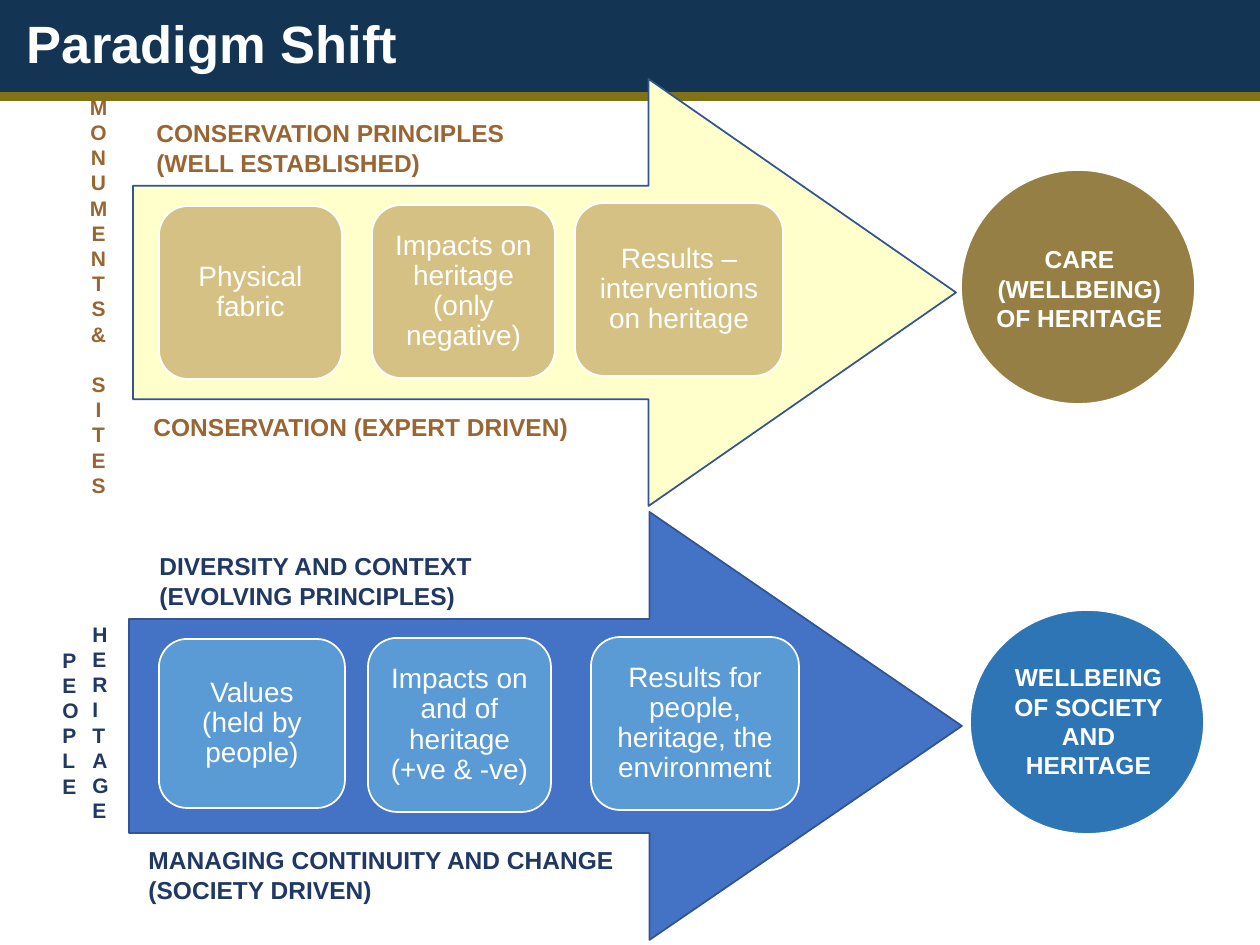
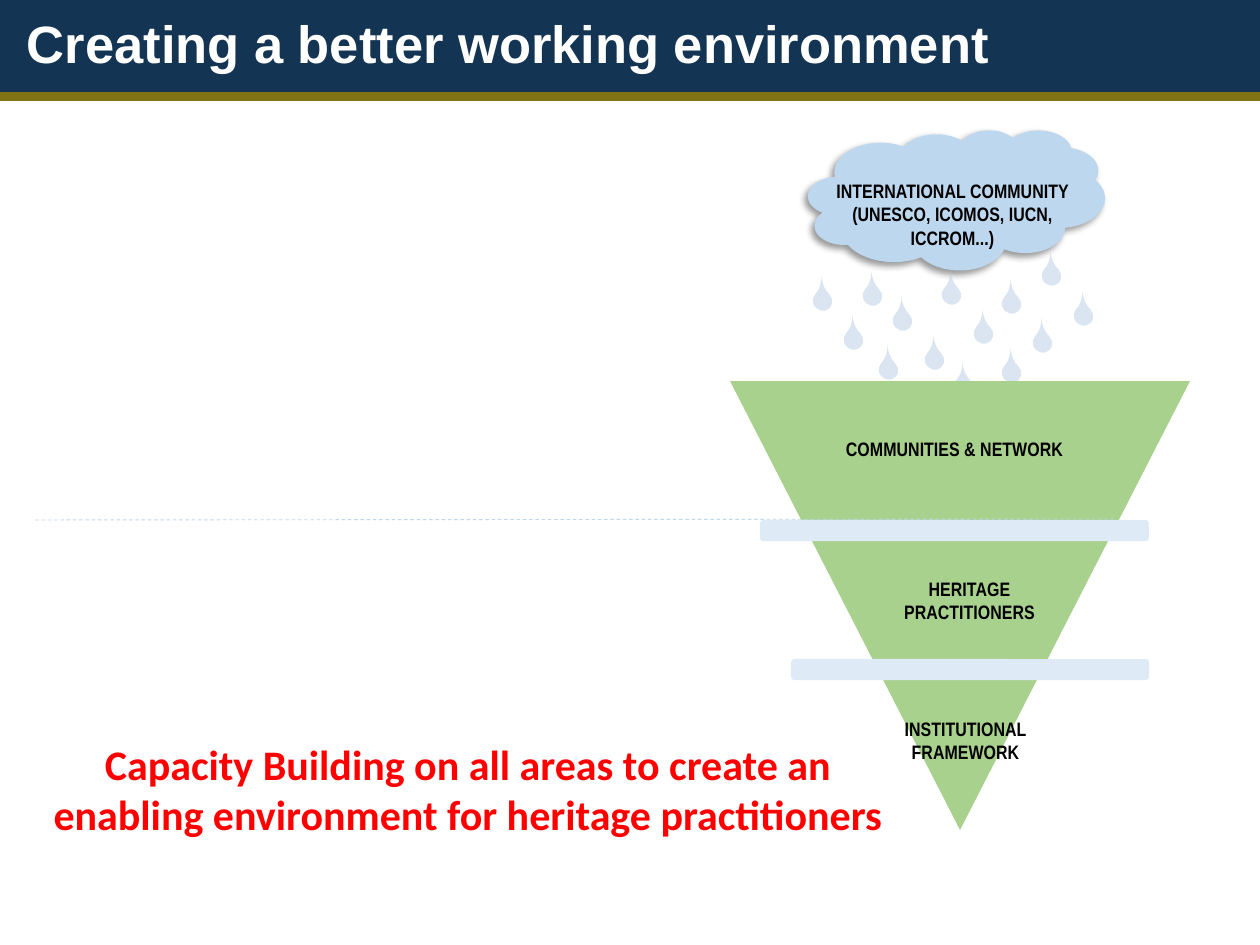
import pptx
import pptx.dml.color
import pptx.enum.dml
import pptx.enum.shapes
import pptx.enum.text
import pptx.oxml
import pptx.oxml.ns
import pptx.util

RGBColor = pptx.dml.color.RGBColor
Shape = pptx.enum.shapes.MSO_SHAPE
Align = pptx.enum.text.PP_ALIGN
Anchor = pptx.enum.text.MSO_ANCHOR
AutoSize = pptx.enum.text.MSO_AUTO_SIZE

PX_PER_INCH = 126
SLIDE_WIDTH, SLIDE_HEIGHT = 1260, 945
HEADER_HEIGHT, BAND_HEIGHT = 92, 9

WHITE = RGBColor(0xFF, 0xFF, 0xFF)
BLACK = RGBColor(0x00, 0x00, 0x00)
RED = RGBColor(0xFF, 0x00, 0x00)
NAVY = RGBColor(0x13, 0x34, 0x53)
OLIVE = RGBColor(0x80, 0x72, 0x15)
ARROW_EDGE = RGBColor(0x32, 0x54, 0x91)
CREAM = RGBColor(0xFF, 0xFF, 0xCC)
SAND = RGBColor(0xD6, 0xC1, 0x84)
BRONZE = RGBColor(0x96, 0x7F, 0x44)
BROWN = RGBColor(0x99, 0x66, 0x33)
ROYAL_BLUE = RGBColor(0x44, 0x72, 0xC4)
SKY_BLUE = RGBColor(0x5B, 0x9B, 0xD5)
OCEAN_BLUE = RGBColor(0x2E, 0x75, 0xB6)
DARK_BLUE = RGBColor(0x20, 0x38, 0x64)
CLOUD_BLUE = RGBColor(0xBD, 0xD7, 0xEE)
RAIN_BLUE = RGBColor(0xB9, 0xCD, 0xE5)
BAR_BLUE = RGBColor(0xDE, 0xEB, 0xF7)
GREEN = RGBColor(0xA9, 0xD1, 0x8E)

DROP_SIZE = (19, 20)
DROPS = [(813, 291), (844, 330), (893, 311), (925, 350), (942, 285),
         (974, 324), (1002, 294), (1033, 333), (1042, 266), (1074, 306),
         (863, 286), (1002, 363), (954, 377), (879, 360)]


def px(length):
    return pptx.util.Emu(round(length * 914400 / PX_PER_INCH))


def place(shape, box):
    shape.left, shape.top, shape.width, shape.height = map(px, box)


def format_text(shape, text, size, color, bold=True, font="Arial",
                align=Align.LEFT, spacing=None):
    frame = shape.text_frame
    frame.text = text
    for paragraph in frame.paragraphs:
        paragraph.alignment = align
        if spacing:
            paragraph.line_spacing = spacing
        for run in paragraph.runs:
            run.font.size = pptx.util.Pt(size)
            run.font.name = font
            run.font.bold = bold
            run.font.color.rgb = color


def add_filled(slide, kind, box, fill, line=None):
    shape = slide.shapes.add_shape(kind, *map(px, box))
    shape.shadow.inherit = False
    shape.fill.solid()
    shape.fill.fore_color.rgb = fill
    if line is None:
        shape.line.fill.background()
    else:
        shape.line.color.rgb = line
        shape.line.width = pptx.util.Pt(1)
    return shape


def add_label(slide, box, text, size, color, **style):
    label = slide.shapes.add_textbox(*map(px, box))
    label.text_frame.word_wrap = True
    format_text(label, text, size, color, **style)
    return label


def add_stacked_label(slide, box, text, color, align=Align.LEFT, wrap=True):
    """Letters stand upright, one below the other."""
    label = add_label(slide, box, text, 12, color, align=align)
    frame = label.text_frame
    frame.word_wrap = wrap
    frame.auto_size = AutoSize.SHAPE_TO_FIT_TEXT
    label.element.txBody.bodyPr.set("vert", "wordArtVert")


def add_arrow(slide, box, head, fill):
    arrow = add_filled(slide, Shape.RIGHT_ARROW, box, fill, ARROW_EDGE)
    arrow.adjustments[0] = 0.5
    arrow.adjustments[1] = head


def add_step(slide, box, text, fill):
    step = add_filled(slide, Shape.ROUNDED_RECTANGLE, box, fill, WHITE)
    frame = step.text_frame
    frame.word_wrap = True
    frame.vertical_anchor = Anchor.MIDDLE
    frame.margin_left = frame.margin_right = px(11)
    frame.margin_top = frame.margin_bottom = px(11)
    format_text(step, text, 16, WHITE, bold=False, align=Align.CENTER, spacing=0.9)


def add_goal(slide, circle_box, text_box, text, fill):
    add_filled(slide, Shape.OVAL, circle_box, fill, WHITE)
    add_label(slide, text_box, text, 14, WHITE, align=Align.CENTER)


def add_drop(slide, left, top):
    drop = add_filled(slide, Shape.TEAR, (left, top, *DROP_SIZE), RAIN_BLUE)
    drop.rotation = 314
    drop.adjustments[0] = 1.82
    color = drop.element.spPr.find(".//" + pptx.oxml.ns.qn("a:srgbClr"))
    color.append(pptx.oxml.parse_xml(
        f'<a:alpha {pptx.oxml.ns.nsdecls("a")} val="50000"/>'))


def add_cloud(slide, box):
    cloud = add_filled(slide, Shape.CLOUD, box, CLOUD_BLUE)
    effects = cloud.element.spPr.find(pptx.oxml.ns.qn("a:effectLst"))
    effects.append(pptx.oxml.parse_xml(
        f'<a:outerShdw {pptx.oxml.ns.nsdecls("a")} blurRad="50800" dist="38100"'
        ' dir="8100000" algn="tr" rotWithShape="0"><a:srgbClr val="000000">'
        '<a:alpha val="40000"/></a:srgbClr></a:outerShdw>'))


def add_dashed_line(slide, start, end):
    line = slide.shapes.add_connector(
        pptx.enum.shapes.MSO_CONNECTOR.STRAIGHT, *map(px, start + end))
    line.line.color.rgb = CLOUD_BLUE
    line.line.width = pptx.util.Pt(0.5)
    line.line.dash_style = pptx.enum.dml.MSO_LINE.DASH
    line.element.spPr.append(pptx.oxml.parse_xml(
        f'<a:effectLst {pptx.oxml.ns.nsdecls("a")}/>'))


def add_titled_slide(presentation, text):
    """Title on a navy header with an olive band under it."""
    slide = presentation.slides.add_slide(presentation.slide_layouts[5])
    title = slide.shapes.title
    place(title, (0, 0, SLIDE_WIDTH, HEADER_HEIGHT))
    title.fill.solid()
    title.fill.fore_color.rgb = NAVY
    format_text(title, text, 30, WHITE, spacing=0.9)
    frame = title.text_frame
    frame.auto_size = AutoSize.NONE
    frame.vertical_anchor = Anchor.MIDDLE
    frame.margin_left = px(27)
    frame.paragraphs[0].space_before = pptx.util.Pt(10)
    add_filled(slide, Shape.RECTANGLE, (0, HEADER_HEIGHT, SLIDE_WIDTH, BAND_HEIGHT), OLIVE)
    return slide


def build_paradigm_shift(presentation):
    slide = add_titled_slide(presentation, "Paradigm Shift")

    # Conservation of monuments and sites
    add_arrow(slide, (133, 79, 823, 427), 0.72, CREAM)
    for box, text in [
        ((159, 206, 183, 173), "Physical fabric"),
        ((372, 205, 183, 173), "Impacts on heritage (only negative)"),
        ((575, 203, 208, 173), "Results – interventions on heritage"),
    ]:
        add_step(slide, box, text, SAND)
    add_stacked_label(slide, (58, 165, 81, 262), "MONUMENTS\n& SITES", BROWN,
                      align=Align.CENTER, wrap=False)
    add_goal(slide, (961, 170, 234, 234), (978, 238, 203, 102),
             "CARE (WELLBEING) OF HERITAGE", BRONZE)
    add_label(slide, (141, 406, 645, 43), "CONSERVATION (EXPERT DRIVEN)", 14, BROWN)
    add_label(slide, (144, 112, 645, 72),
              "CONSERVATION PRINCIPLES\n(WELL ESTABLISHED)", 14, BROWN)

    # People and heritage
    add_arrow(slide, (129, 512, 833, 428), 0.73, ROYAL_BLUE)
    for box, text in [
        ((159, 639, 186, 169), "Values (held by people)"),
        ((368, 638, 183, 174), "Impacts on and of heritage (+ve & -ve)"),
        ((591, 637, 208, 173), "Results for people, heritage, the environment"),
    ]:
        add_step(slide, box, text, SKY_BLUE)
    add_stacked_label(slide, (50, 641, 81, 215), "PEOPLE", DARK_BLUE)
    add_stacked_label(slide, (80, 615, 81, 281), "HERITAGE", DARK_BLUE)
    add_goal(slide, (970, 610, 234, 224), (987, 656, 203, 131),
             "WELLBEING OF SOCIETY AND HERITAGE", OCEAN_BLUE)
    add_label(slide, (147, 545, 425, 72),
              "DIVERSITY AND CONTEXT\n(EVOLVING PRINCIPLES)", 14, DARK_BLUE)
    add_label(slide, (136, 839, 533, 72),
              "MANAGING CONTINUITY AND CHANGE\n(SOCIETY DRIVEN)", 14, DARK_BLUE)


def build_working_environment(presentation):
    slide = add_titled_slide(presentation, "Creating a better working environment")
    narrow = {"size": 11.1, "color": BLACK, "font": "Arial Narrow", "align": Align.CENTER}

    # Cloud and rain
    add_cloud(slide, (808, 130, 297, 140))
    add_label(slide, (821, 173, 263, 83),
              "INTERNATIONAL COMMUNITY (UNESCO, ICOMOS, IUCN, ICCROM...)", **narrow)
    for left, top in DROPS:
        add_drop(slide, left, top)

    # Key message
    message = add_label(
        slide, (13, 707, 910, 164),
        "Capacity Building on all areas to create an enabling environment"
        " for heritage practitioners",
        24, RED, font="Calibri", align=Align.CENTER)
    message.text_frame.vertical_anchor = Anchor.MIDDLE

    # Inverted pyramid split by two bars
    pyramid = add_filled(slide, Shape.ISOSCELES_TRIANGLE, (730, 381, 460, 449), GREEN)
    pyramid.rotation = 180
    for box in [(760, 520, 389, 21), (791, 659, 358, 21)]:
        add_filled(slide, Shape.ROUNDED_RECTANGLE, box, BAR_BLUE)
    for box, text in [
        ((842, 711, 247, 69), "INSTITUTIONAL FRAMEWORK"),
        ((834, 571, 271, 69), "HERITAGE\nPRACTITIONERS"),
        ((819, 431, 271, 43), "COMMUNITIES & NETWORK"),
    ]:
        add_label(slide, box, text, **narrow)
    add_dashed_line(slide, (1114, 519), (33, 520))


def main():
    presentation = pptx.Presentation()
    presentation.slide_width = px(SLIDE_WIDTH)
    presentation.slide_height = px(SLIDE_HEIGHT)
    build_paradigm_shift(presentation)
    build_working_environment(presentation)
    presentation.save("out.pptx")


if __name__ == "__main__":
    main()
